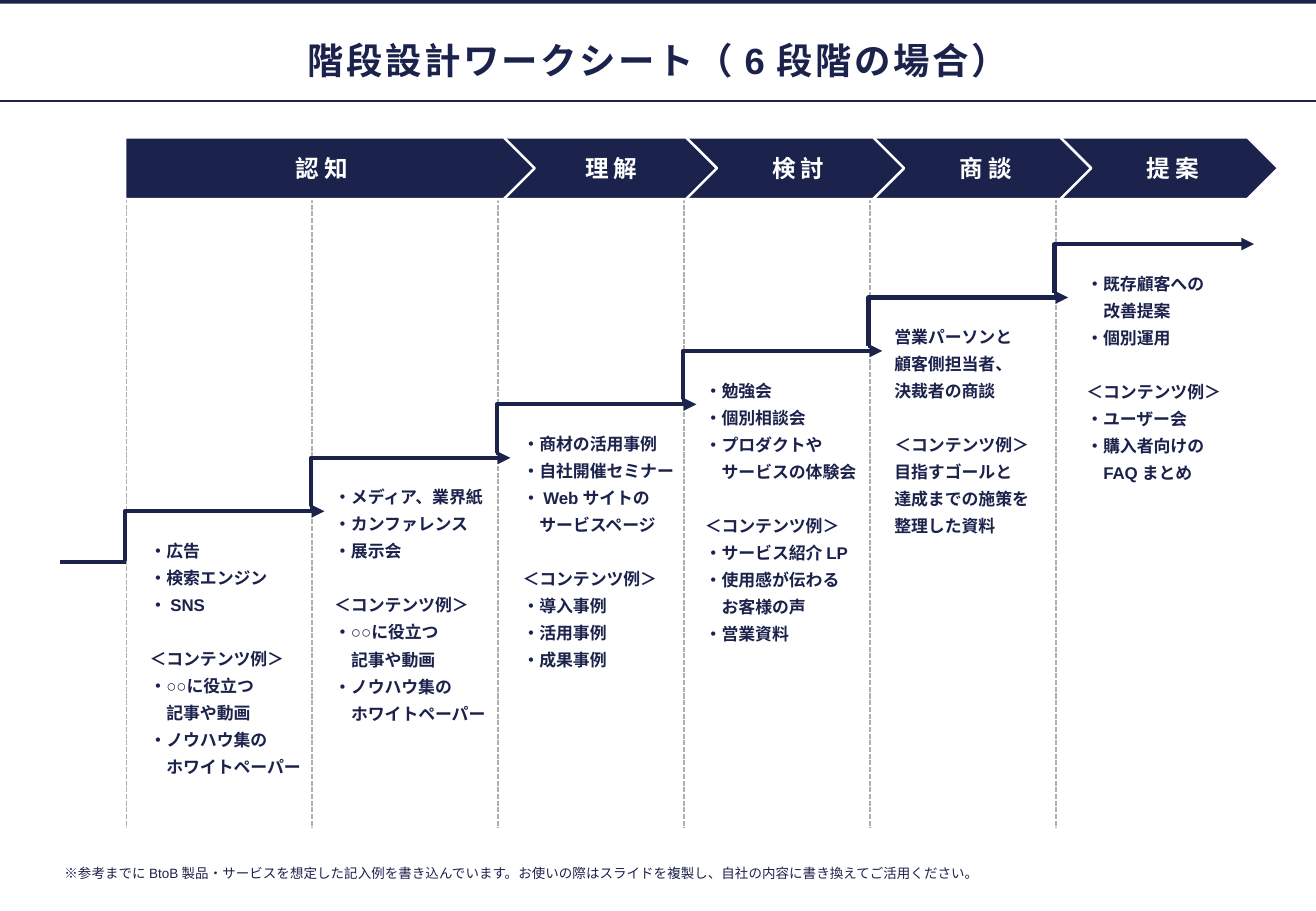
from dataclasses import dataclass

from lxml.etree import SubElement
from pptx import Presentation
from pptx.dml.color import RGBColor
from pptx.enum.dml import MSO_LINE
from pptx.enum.shapes import MSO_CONNECTOR as Link, MSO_SHAPE as Preset
from pptx.enum.text import MSO_ANCHOR as Anchor, PP_ALIGN as Align
from pptx.oxml.ns import qn
from pptx.shapes.autoshape import Shape
from pptx.shapes.connector import Connector
from pptx.shapes.shapetree import SlideShapes
from pptx.text.text import TextFrame
from pptx.util import Inches, Pt

COLORS = {"navy": "1B224C", "guide": "AFAFAF", "white": "FFFFFF"}
FONT = "Arial"
SLIDE_WIDTH, SLIDE_HEIGHT = 10.83, 7.5
INSET = 0.04
STAGE_WIDTH = 1.53
RISE = 0.44
HEADING = "＜コンテンツ例＞"


@dataclass
class Phase:
    name: str
    left: float
    width: float = 1.81
    inset_left: float = 0.24


@dataclass
class Stage:
    """A newline inside an item starts an indented continuation line."""
    left: float
    actions: list[str]
    contents: list[str]


@dataclass
class Line:
    text: str
    indent: float = 0
    before: float = 0


PHASES = [Phase("認知", 1.03, 3.37, INSET)] + [
    Phase(name, 4.09 + 1.54 * i)
    for i, name in enumerate(["理解", "検討", "商談", "提案"])
]

AWARENESS_CONTENTS = ["・○○に役立つ\n記事や動画", "・ノウハウ集の\nホワイトペーパー"]
STAGES = [
    Stage(1.19, ["・広告", "・検索エンジン", "・SNS"], AWARENESS_CONTENTS),
    Stage(2.71, ["・メディア、業界紙", "・カンファレンス", "・展示会"], AWARENESS_CONTENTS),
    Stage(4.26, ["・商材の活用事例", "・自社開催セミナー", "・Webサイトの\nサービスページ"],
          ["・導入事例", "・活用事例", "・成果事例"]),
    Stage(5.76, ["・勉強会", "・個別相談会", "・プロダクトや\nサービスの体験会"],
          ["・サービス紹介LP", "・使用感が伝わる\nお客様の声", "・営業資料"]),
    Stage(7.32, ["営業パーソンと", "顧客側担当者、", "決裁者の商談"],
          ["目指すゴールと", "達成までの施策を", "整理した資料"]),
    Stage(8.9, ["・既存顧客への\n改善提案", "・個別運用"],
          ["・ユーザー会", "・購入者向けの\nFAQまとめ"]),
]


def rgb(name: str) -> RGBColor:
    return RGBColor.from_string(COLORS[name])


def write(frame: TextFrame, lines: list[Line], *, size: float, color: str = "navy",
          bold: bool = True, align: Align = Align.LEFT, anchor: Anchor = Anchor.TOP,
          tracking: float = 0, after: float = 0, spacing: float = 1,
          wrap: bool = True, inset_left: float = INSET) -> None:
    frame.word_wrap = wrap
    frame.vertical_anchor = anchor
    frame.margin_left = Inches(inset_left)
    frame.margin_top = frame.margin_right = frame.margin_bottom = Inches(INSET)
    for i, line in enumerate(lines):
        paragraph = frame.add_paragraph() if i else frame.paragraphs[0]
        paragraph.alignment = align
        paragraph.line_spacing = spacing
        paragraph.space_before = Pt(line.before)
        paragraph.space_after = Pt(after)
        paragraph._p.get_or_add_pPr().set("marL", str(Pt(line.indent)))
        run = paragraph.add_run()
        run.text = line.text
        run.font.size = Pt(size)
        run.font.bold = bold
        run.font.color.rgb = rgb(color)
        run.font.name = FONT
        properties = run._r.get_or_add_rPr()
        properties.set("spc", str(int(tracking * 100)))
        SubElement(properties, qn("a:ea"), typeface=FONT)


def add_frame(shapes: SlideShapes, left: float, top: float, width: float,
              height: float) -> TextFrame:
    return shapes.add_textbox(Inches(left), Inches(top), Inches(width),
                              Inches(height)).text_frame


def add_block(shapes: SlideShapes, preset: Preset, left: float, top: float,
              width: float, height: float) -> Shape:
    block = shapes.add_shape(preset, Inches(left), Inches(top), Inches(width), Inches(height))
    block.shadow.inherit = False
    block.fill.solid()
    block.fill.fore_color.rgb = rgb("navy")
    block.line.fill.background()
    return block


def add_line(shapes: SlideShapes, x1: float, y1: float, x2: float, y2: float,
             weight: float, color: str = "navy", link: Link = Link.STRAIGHT) -> Connector:
    line = shapes.add_connector(link, Inches(x1), Inches(y1), Inches(x2), Inches(y2))
    line.line.color.rgb = rgb(color)
    line.line.width = Pt(weight)
    SubElement(line._element.spPr, qn("a:effectLst"))
    return line


def add_step_arrow(shapes: SlideShapes, left: float, bottom: float) -> None:
    """Draw an arrow that climbs at its left end and then runs to the right."""
    step = add_line(shapes, left, bottom, left + 1.65, bottom - 0.4, 2.5, link=Link.ELBOW)
    bend = step._element.spPr.find(qn("a:prstGeom")).get_or_add_avLst()
    SubElement(bend, qn("a:gd"), name="adj1", fmla="val 500")
    SubElement(step.line._get_or_add_ln(), qn("a:tailEnd"), type="triangle")


def add_phase(shapes: SlideShapes, phase: Phase) -> None:
    plate = add_block(shapes, Preset.PENTAGON, phase.left, 1.13, phase.width, 0.51)
    plate.line.color.rgb = rgb("white")
    plate.line.width = Pt(1.5)
    write(plate.text_frame, [Line(phase.name)], size=14, color="white", tracking=3,
          align=Align.CENTER, anchor=Anchor.MIDDLE, inset_left=phase.inset_left)


def item_lines(items: list[str]) -> list[Line]:
    return [Line(text, indent=10 if i else 0)
            for item in items for i, text in enumerate(item.split("\n"))]


def add_stage(shapes: SlideShapes, stage: Stage, top: float) -> None:
    lines = [*item_lines(stage.actions), Line(HEADING, before=16), *item_lines(stage.contents)]
    write(add_frame(shapes, stage.left, top, 1.38, 2.76), lines, size=10, after=4)


def main() -> None:
    deck = Presentation()
    deck.slide_width, deck.slide_height = Inches(SLIDE_WIDTH), Inches(SLIDE_HEIGHT)
    shapes = deck.slides.add_slide(deck.slide_layouts[6]).shapes

    add_line(shapes, 0, 0.83, SLIDE_WIDTH, 0.83, 1)
    add_block(shapes, Preset.RECTANGLE, 0, 0, SLIDE_WIDTH, 0.03)
    write(add_frame(shapes, 0.49, 0.21, 9.84, 0.39), [Line("階段設計ワークシート（6段階の場合）")],
          size=21.6, tracking=1.5, spacing=1.5, align=Align.CENTER,
          anchor=Anchor.MIDDLE, wrap=False)

    for i in range(len(STAGES)):
        x = 1.04 + STAGE_WIDTH * i
        guide = add_line(shapes, x, 1.19, x, 6.82, 1, "guide")
        guide.line.dash_style = MSO_LINE.SQUARE_DOT

    add_line(shapes, 1.04, 4.63, 0.49, 4.63, 2.5)
    for i, stage in enumerate(STAGES):
        add_step_arrow(shapes, 1.02 + STAGE_WIDTH * i, 4.61 - RISE * i)
        add_stage(shapes, stage, 4.41 - RISE * i)

    for phase in reversed(PHASES):
        add_phase(shapes, phase)

    write(add_frame(shapes, 0.49, 7.11, 8.62, 0.16),
          [Line("※参考までにBtoB製品・サービスを想定した記入例を書き込んでいます。"
                "お使いの際はスライドを複製し、自社の内容に書き換えてご活用ください。")],
          size=8, bold=False, anchor=Anchor.MIDDLE)
    deck.save("out.pptx")


if __name__ == "__main__":
    main()
